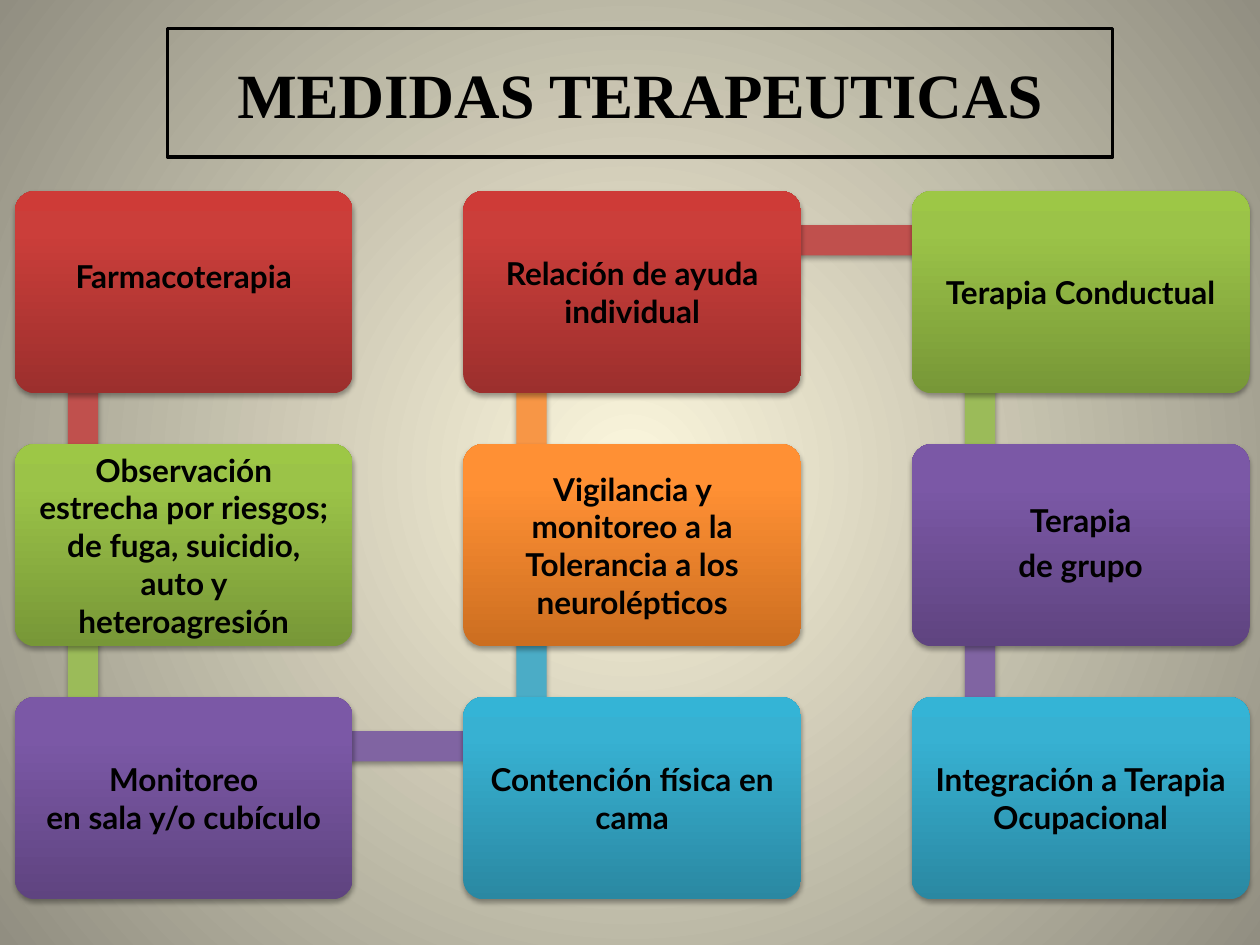
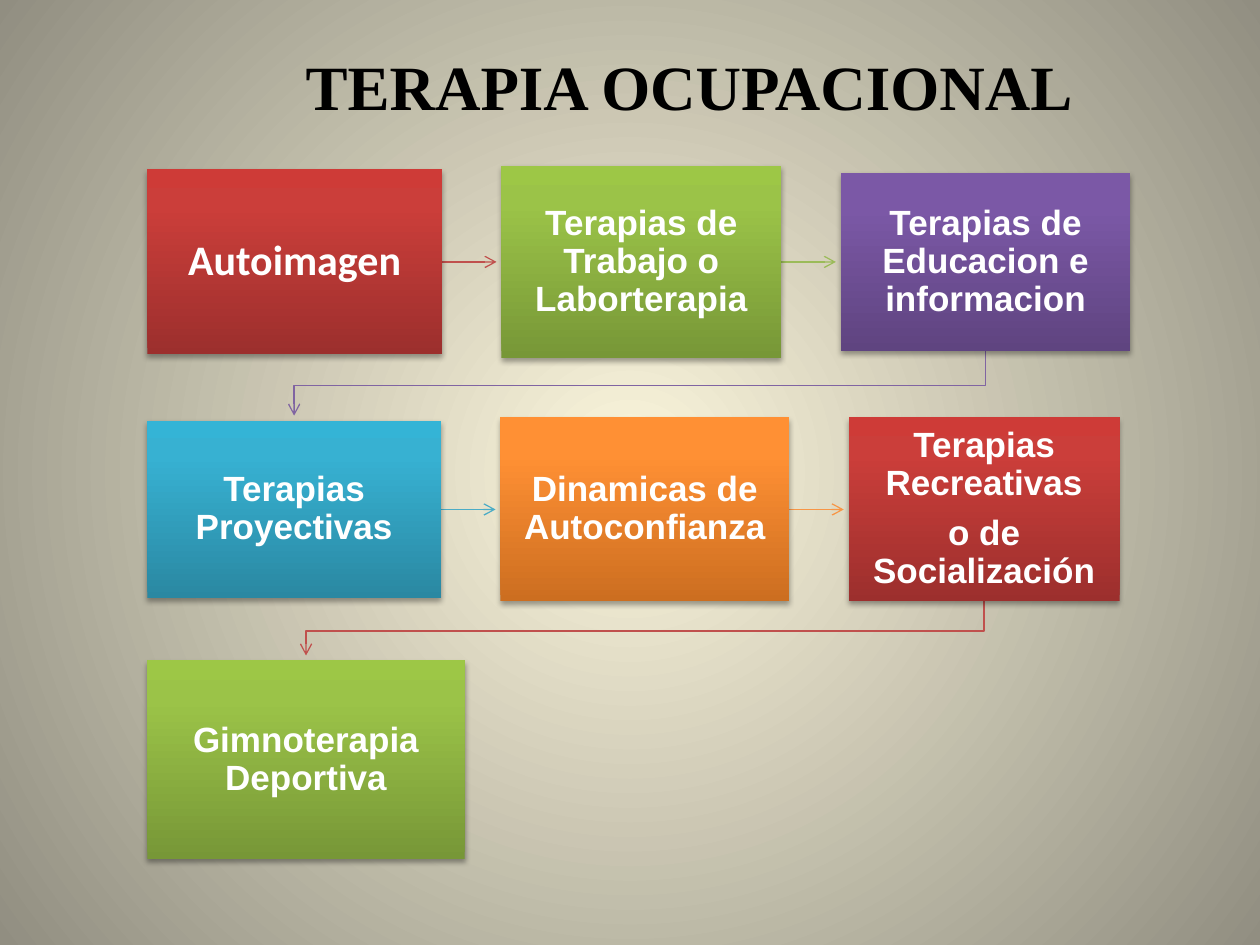
from lxml.etree import SubElement
from pptx import Presentation
from pptx.dml.color import RGBColor
from pptx.enum.shapes import MSO_CONNECTOR, MSO_SHAPE
from pptx.enum.text import MSO_ANCHOR, PP_ALIGN
from pptx.oxml import parse_xml
from pptx.oxml.ns import nsdecls, qn
from pptx.util import Cm, Pt

COLOURS = {
    "black": "000000", "white": "FFFFFF", "centre": "FCF7DD", "edge": "918E81",
    "red": "C0504D", "green": "9BBB59", "purple": "8064A2", "cyan": "4BACC6", "orange": "F79646",
}
GLOSS = {
    "red": ("9C2F2D", "CB3E3A", "CE3B37"),
    "green": ("779737", "9BC348", "9DC746"),
    "purple": ("5F4480", "7B58A6", "7C57A8"),
    "cyan": ("2A88A2", "37B1D2", "34B4D6"),
    "orange": ("CC6E20", "FF9034", "FF9136"),
}
CYCLE = list(GLOSS)
UPWARD = '<a:lin ang="16200000" scaled="0"/>'
FROM_CENTRE = '<a:path path="circle"><a:fillToRect l="50000" t="50000" r="50000" b="50000"/></a:path>'

MEASURES = [
    "Farmacoterapia",
    "Observación estrecha por riesgos; de fuga, suicidio, auto y heteroagresión",
    "Monitoreo\nen sala y/o cubículo",
    "Contención física en cama",
    "Vigilancia y monitoreo a la Tolerancia a los neurolépticos",
    "Relación de ayuda individual",
    "Terapia Conductual",
    "Terapia\nde grupo",
    "Integración a Terapia Ocupacional",
]
MEASURE_FORMATS = {
    "Farmacoterapia": {"bottom": 0.94},
    "Terapia\nde grupo": {"spacing": 0.9, "gap": 6.3},
}
THERAPY_ROWS = [
    (5.28, [("Autoimagen", 5.94, 3.73), ("Terapias de Trabajo o Laborterapia", 5.64, 3.86),
            ("Terapias de Educacion e informacion", 5.84, 3.58)]),
    (10.27, [("Terapias Proyectivas", 5.92, 3.58), ("Dinamicas de Autoconfianza", 5.82, 3.71),
             ("Terapias Recreativas\no de Socialización", 5.46, 3.71)]),
    (15.32, [("Gimnoterapia Deportiva", 6.4, 4.01)]),
]


def colour(name):
    return RGBColor.from_string(COLOURS[name])


def gradient(stops, direction):
    marks = "".join(f'<a:gs pos="{place * 1000}"><a:srgbClr val="{value}"/></a:gs>' for place, value in stops)
    return parse_xml(f'<a:gradFill {nsdecls("a")} rotWithShape="1"><a:gsLst>{marks}</a:gsLst>{direction}</a:gradFill>')


def write(box, text, font="Arial", size=20, ink="white", spacing=1.0, gap=0, inset=0.25, bottom=None):
    frame = box.text_frame
    frame.word_wrap = True
    frame.vertical_anchor = MSO_ANCHOR.MIDDLE
    frame.margin_left = frame.margin_right = frame.margin_top = Cm(inset)
    frame.margin_bottom = Cm(inset if bottom is None else bottom)
    for index, line in enumerate(text.split("\n")):
        para = frame.add_paragraph() if index else frame.paragraphs[0]
        para.alignment = PP_ALIGN.CENTER
        para.line_spacing = spacing
        if index:
            para.space_before = Pt(gap)
        span = para.add_run()
        span.text = line
        span.font.name = font
        span.font.size = Pt(size)
        span.font.bold = True
        span.font.color.rgb = colour(ink)


class Board:
    """Holds the deck style and the page being drawn."""

    def __init__(self):
        self.deck = Presentation()
        self.deck.slide_width, self.deck.slide_height = Cm(25.4), Cm(19.05)
        self.page = None
        master = self.deck.slide_master
        master.background.fill.solid()
        backdrop = next(master.element.iter(qn("p:bgPr")))
        glow = gradient([(0, COLOURS["centre"]), (100, COLOURS["edge"])], FROM_CENTRE)
        backdrop.replace(backdrop.find(qn("a:solidFill")), glow)

    def new_page(self):
        self.page = self.deck.slides.add_slide(self.deck.slide_layouts[6])

    def title(self, text, left, top, width, height, framed=False):
        box = self.page.shapes.add_textbox(Cm(left), Cm(top), Cm(width), Cm(height))
        if framed:
            box.line.color.rgb = colour("black")
            box.line.width = Pt(2)
        write(box, text, font="Times New Roman", size=36, ink="black")

    def block(self, kind, left, top, width, height, name):
        shape = self.page.shapes.add_shape(kind, Cm(left), Cm(top), Cm(width), Cm(height))
        shape.fill.solid()
        shape.fill.fore_color.rgb = colour(name)
        shape.line.fill.background()
        shape.shadow.inherit = False
        effects = shape.element.spPr.find(qn("a:effectLst"))
        shadow = SubElement(effects, qn("a:outerShdw"), blurRad=str(Pt(3.1)), dist=str(Pt(1.8)),
                            dir="5400000", rotWithShape="0")
        tint = SubElement(shadow, qn("a:srgbClr"), val=COLOURS["black"])
        SubElement(tint, qn("a:alpha"), val="35000")
        return shape

    def card(self, kind, left, top, width, height, name, text, **style):
        shape = self.block(kind, left, top, width, height, name)
        if kind == MSO_SHAPE.ROUNDED_RECTANGLE:
            shape.adjustments[0] = 0.1
        properties = shape.element.spPr
        properties.replace(properties.find(qn("a:solidFill")), gradient(zip((0, 80, 100), GLOSS[name]), UPWARD))
        write(shape, text, **style)

    def arrow(self, points, name):
        corners = [(Cm(x), Cm(y)) for x, y in points]
        if len(corners) == 2:
            line = self.page.shapes.add_connector(MSO_CONNECTOR.STRAIGHT, *corners[0], *corners[1])
            line.line.color.rgb = colour(name)
            SubElement(line.element.spPr, qn("a:effectLst"))
        else:
            builder = self.page.shapes.build_freeform(*corners[0])
            builder.add_line_segments(corners[1:], close=False)
            line = builder.convert_to_shape()
            line.fill.background()
            line.shadow.inherit = False
            line.line.color.rgb = colour(name)
        line.line.width = Pt(0.75)
        SubElement(line.element.spPr.find(qn("a:ln")), qn("a:tailEnd"), type="arrow")


def draw_measures(board):
    board.new_page()
    board.title("MEDIDAS TERAPEUTICAS", 3.38, 0.58, 19.05, 2.59, framed=True)
    step_x, step_y, bar = 9.04, 5.1, 0.61
    places = []
    for index in range(len(MEASURES)):
        column, row = divmod(index, 3)
        row = 2 - row if column == 1 else row
        places.append((0.3 + column * step_x, 3.85 + row * step_y))
    for index, (text, (left, top)) in enumerate(zip(MEASURES, places)):
        name = CYCLE[index % len(CYCLE)]
        if index + 1 < len(places):
            next_left, next_top = places[index + 1]
            if next_left > left:
                board.block(MSO_SHAPE.RECTANGLE, left + 1.4, top + 0.69, step_x, bar, name)
            else:
                board.block(MSO_SHAPE.RECTANGLE, left + 1.07, min(top, next_top) + 1, bar, step_y, name)
        style = {"font": "Lato", "size": 18, "ink": "black", "inset": 0.28, **MEASURE_FORMATS.get(text, {})}
        board.card(MSO_SHAPE.ROUNDED_RECTANGLE, left, top, 6.81, 4.08, name, text, **style)


def draw_therapies(board):
    board.new_page()
    board.title("TERAPIA OCUPACIONAL", 3.48, 0.13, 20.83, 3.18)
    gap, clearance = 1.2, 0.1
    cards = []
    for middle, row in THERAPY_ROWS:
        left = 2.97
        for text, width, height in row:
            cards.append((text, left, middle, width, height))
            left += width + gap
    for index, (text, left, middle, width, height) in enumerate(cards):
        name = CYCLE[index % len(CYCLE)]
        if index + 1 < len(cards):
            _, next_left, next_middle, next_width, next_height = cards[index + 1]
            if next_middle == middle:
                points = [(left + width, middle), (next_left - clearance, middle)]
            else:
                start, target = left + width / 2, next_left + next_width / 2
                bottom, next_top = middle + height / 2, next_middle - next_height / 2
                bend = (bottom + next_top) / 2
                points = [(start, bottom), (start, bend), (target, bend), (target, next_top - clearance)]
            board.arrow(points, name)
        style = {"font": "Calibri", "size": 24, "inset": 0.48} if index == 0 else {"inset": 0.41}
        board.card(MSO_SHAPE.RECTANGLE, left, middle - height / 2, width, height, name, text,
                   spacing=0.9, gap=7, **style)


def main():
    board = Board()
    draw_measures(board)
    draw_therapies(board)
    board.deck.save("out.pptx")


if __name__ == "__main__":
    main()
